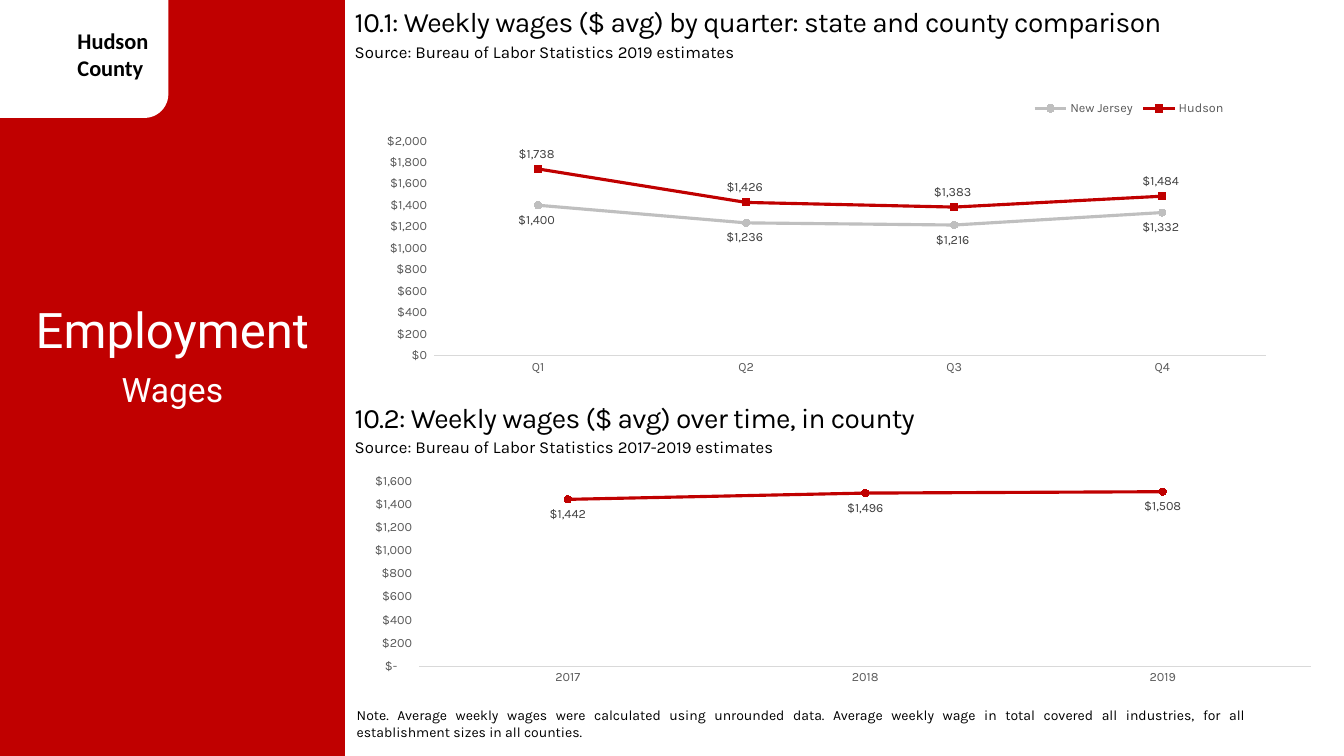
from dataclasses import dataclass

from lxml import etree
from pptx import Presentation
from pptx.chart.data import CategoryChartData
from pptx.dml.color import RGBColor
from pptx.enum import chart as ch, shapes, text as tx
from pptx.oxml import ns
from pptx.util import Inches, Pt


@dataclass(frozen=True)
class Theme:
    red: str = "C00000"
    white: str = "FFFFFF"
    black: str = "000000"
    silver: str = "BFBFBF"
    axis_line: str = "D9D9D9"
    axis_text: str = "595959"
    label_text: str = "404040"
    body_font: str = "Karla"
    panel_font: str = "Roboto"
    tab_font: str = "Calibri"
    title: int = 35
    subtitle: int = 24
    heading: int = 20
    tab: int = 16
    source: int = 12
    note: int = 10
    chart: int = 9


THEME = Theme()
DOLLARS = '"$"#,##0_);[Red]\\("$"#,##0\\)'
ACCOUNTING = '_("$"* #,##0_);_("$"* \\(#,##0\\);_("$"* "-"??_);_(@_)'
LABEL = ch.XL_LABEL_POSITION
MARKER = ch.XL_MARKER_STYLE


def rgb(code):
    return RGBColor.from_string(code)


def place(shape, box):
    shape.left, shape.top, shape.width, shape.height = (Inches(n) for n in box)
    return shape


def style_font(font, size, color, name=THEME.body_font, bold=False):
    font.size, font.name, font.bold = Pt(size), name, bold
    font.color.rgb = rgb(color)


def write(shape, text, size, color=THEME.black, font=THEME.body_font, bold=False,
          align=tx.PP_ALIGN.LEFT, anchor=tx.MSO_ANCHOR.TOP, spacing=None):
    frame = shape.text_frame
    frame.word_wrap = True
    frame.auto_size = tx.MSO_AUTO_SIZE.NONE
    frame.vertical_anchor = anchor
    paragraph = frame.paragraphs[0]
    paragraph.alignment = align
    paragraph.space_before = Pt(0)
    run = paragraph.add_run()
    run.text = text
    style_font(run.font, size, color, font, bold)
    if spacing is not None:
        run._r.get_or_add_rPr().set("spc", str(round(spacing * 100)))


def add_text(slide, box, text, size, **fmt):
    write(slide.shapes.add_textbox(*(Inches(n) for n in box)), text, size, **fmt)


def add_block(slide, kind, box, color, depth):
    """Plain filled shape, kept behind the placeholders."""
    block = slide.shapes.add_shape(kind, *(Inches(n) for n in box))
    block.shadow.inherit = False
    block.fill.solid()
    block.fill.fore_color.rgb = rgb(color)
    block.line.fill.background()
    slide.shapes._spTree.insert(2 + depth, block._element)


def set_layout(parent, index, x, y, w, h, inner=False):
    """Fix the place of a plot area or legend, in fractions of the chart."""
    for old in parent.findall(ns.qn("c:layout")):
        parent.remove(old)
    layout = etree.Element(ns.qn("c:layout"))
    manual = etree.SubElement(layout, ns.qn("c:manualLayout"))
    settings = [("layoutTarget", "inner")] if inner else []
    settings += [("xMode", "edge"), ("yMode", "edge"),
                 ("x", x), ("y", y), ("w", w), ("h", h)]
    for tag, value in settings:
        etree.SubElement(manual, ns.qn(f"c:{tag}")).set("val", str(value))
    parent.insert(index, layout)


def side_panel(slide, box, county, topic, subtopic):
    left, top, width, height = box
    add_block(slide, shapes.MSO_SHAPE.RECTANGLE, box, THEME.red, 0)
    # County tab, bleeding over the corner
    add_block(slide, shapes.MSO_SHAPE.ROUNDED_RECTANGLE,
              (left - 0.33, top - 0.25, 2, 1.42), THEME.white, 1)
    add_text(slide, (left + 0.67, top + 0.22, 0.97, 0.64), county, THEME.tab,
             font=THEME.tab_font, bold=True)
    # Topic and subtopic
    heading, subheading = slide.placeholders
    panel_format = dict(color=THEME.white, font=THEME.panel_font,
                        align=tx.PP_ALIGN.CENTER)
    write(place(heading, (left, top + 2.92, width, 0.69)), topic,
          THEME.title, **panel_format)
    write(place(subheading, (left, top + 3.61, width, 0.5)), subtopic,
          THEME.subtitle, **panel_format)


def section_heading(slide, box, heading, source):
    left, top, width, height = box
    add_text(slide, (left, top, width, 0.44), heading, THEME.heading, spacing=-0.5)
    add_text(slide, (left, top + 0.365, width, 0.3), source, THEME.source)


def wage_chart(slide, box, quarters, wages, number_format, top_value, plot_box,
               legend_box=None):
    """wages: (name, values, color, marker, label position) for each line."""
    data = CategoryChartData(number_format=number_format)
    data.categories = quarters
    for name, values, *_ in wages:
        data.add_series(name, values)
    chart = slide.shapes.add_chart(ch.XL_CHART_TYPE.LINE_MARKERS,
                                   *(Inches(n) for n in box), data).chart
    chart.has_title = False
    style_font(chart.font, THEME.chart, THEME.axis_text)
    set_layout(chart._chartSpace.chart.plotArea, 0, *plot_box, inner=True)

    # Axes
    for axis in (chart.category_axis, chart.value_axis):
        axis.has_major_gridlines = False
        axis.major_tick_mark = axis.minor_tick_mark = ch.XL_TICK_MARK.NONE
        style_font(axis.tick_labels.font, THEME.chart, THEME.axis_text)
    chart.category_axis.format.line.color.rgb = rgb(THEME.axis_line)
    chart.category_axis.format.line.width = Pt(0.75)
    scale = chart.value_axis
    scale.format.line.fill.background()
    scale.minimum_scale, scale.maximum_scale, scale.major_unit = 0, top_value, 200
    scale.tick_labels.number_format = number_format
    scale.tick_labels.number_format_is_linked = False

    # Lines
    chart.plots[0].vary_by_categories = False
    for line, (_, _, color, marker, position) in zip(chart.plots[0].series, wages):
        line.smooth = False
        line.format.line.color.rgb = rgb(color)
        line.format.line.width = Pt(2.25)
        line.marker.style, line.marker.size = marker, 5
        line.marker.format.fill.solid()
        line.marker.format.fill.fore_color.rgb = rgb(color)
        line.marker.format.line.color.rgb = rgb(color)
        labels = line.data_labels
        labels.show_value = True
        labels.position = position
        labels.number_format = number_format
        labels.number_format_is_linked = False
        style_font(labels.font, THEME.chart, THEME.label_text)

    # Legend
    chart.has_legend = legend_box is not None
    if legend_box:
        chart.legend.position = ch.XL_LEGEND_POSITION.BOTTOM
        chart.legend.include_in_layout = False
        style_font(chart.legend.font, THEME.chart, THEME.axis_text)
        set_layout(chart.legend._element, 1, *legend_box)


def main():
    deck = Presentation()
    deck.slide_width, deck.slide_height = Inches(13.33), Inches(7.5)
    slide = deck.slides.add_slide(deck.slide_layouts[0])

    side_panel(slide, (0, 0, 3.42, 7.5), "Hudson County", "Employment", "Wages")

    # 10.1 State and county
    section_heading(slide, (3.42, 0, 9.86, 0.66),
                    "10.1: Weekly wages ($ avg) by quarter: state and county comparison",
                    "Source: Bureau of Labor Statistics 2019 estimates")
    wage_chart(slide, (3.58, 0.93, 9.07, 2.92), ["Q1", "Q2", "Q3", "Q4"],
               [("New Jersey", (1400, 1236, 1216, 1332), THEME.silver,
                 MARKER.CIRCLE, LABEL.BELOW),
                ("Hudson", (1738, 1426, 1383, 1484), THEME.red,
                 MARKER.SQUARE, LABEL.ABOVE)],
               DOLLARS, 2000, (0.08, 0.16, 0.91, 0.73), (0.73, 0.01, 0.22, 0.08))

    # 10.2 County over time
    section_heading(slide, (3.42, 3.92, 9.86, 0.66),
                    "10.2: Weekly wages ($ avg) over time, in county",
                    "Source: Bureau of Labor Statistics 2017-2019 estimates")
    wage_chart(slide, (3.58, 4.7, 9.62, 2.3), ["2017", "2018", "2019"],
               [("Series 1", (1442, 1496, 1508), THEME.red,
                 MARKER.CIRCLE, LABEL.BELOW)],
               ACCOUNTING, 1600, (0.06, 0.03, 0.92, 0.8))

    # Note
    add_text(slide, (3.44, 6.93, 9, 0.5),
             "Note. Average weekly wages were calculated using unrounded data. "
             "Average weekly wage in total covered all industries, for all "
             "establishment sizes in all counties.", THEME.note,
             align=tx.PP_ALIGN.JUSTIFY, anchor=tx.MSO_ANCHOR.MIDDLE)

    deck.save("out.pptx")


if __name__ == "__main__":
    main()
